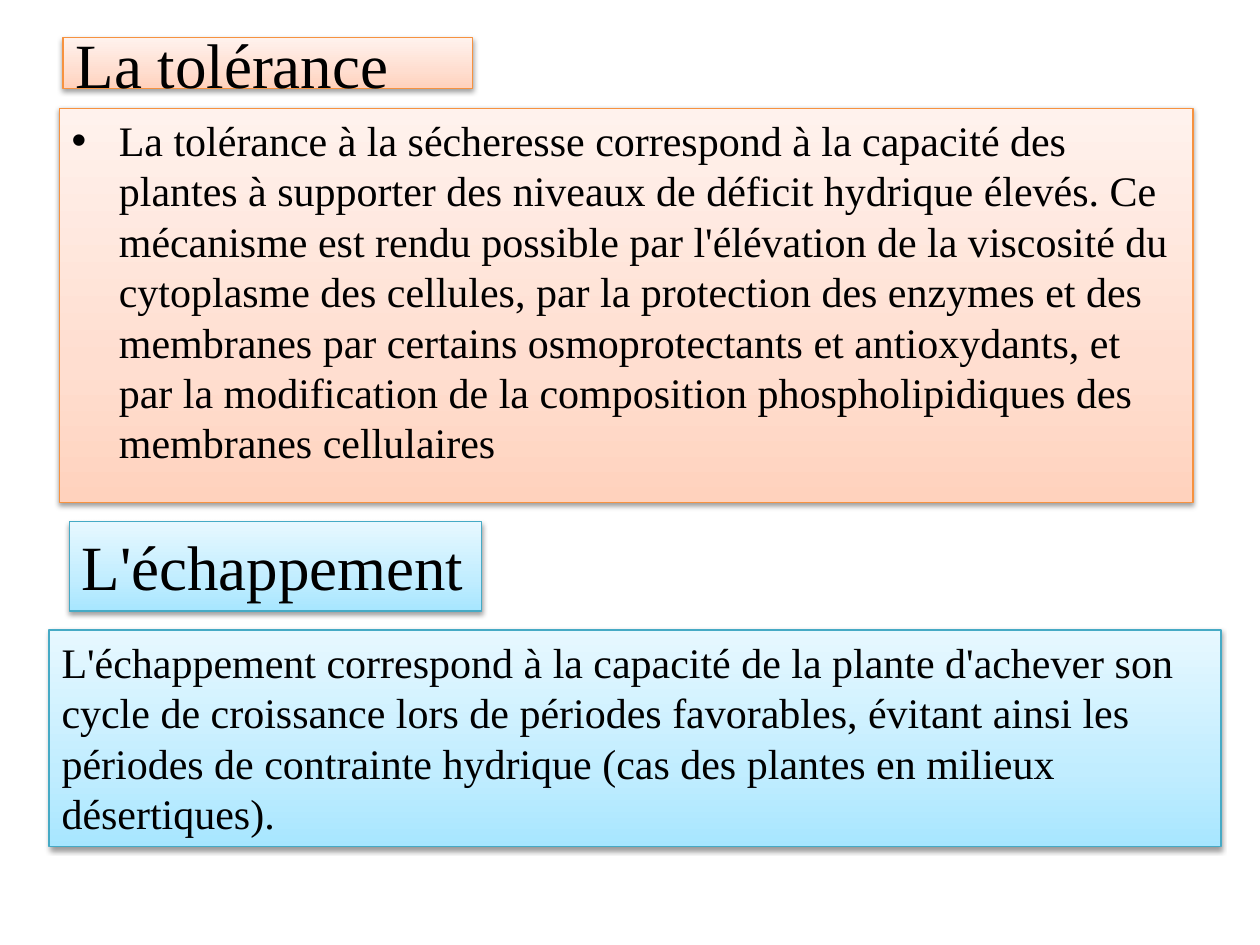
from dataclasses import dataclass

import lxml.etree
import pptx
import pptx.dml.color
import pptx.enum.shapes
import pptx.enum.text
import pptx.oxml
import pptx.oxml.ns
import pptx.util

Pt = pptx.util.Pt
Anchor = pptx.enum.text.MSO_ANCHOR
AutoSize = pptx.enum.text.MSO_AUTO_SIZE
qn = pptx.oxml.ns.qn


@dataclass(frozen=True)
class Theme:
    border: str
    stops: tuple[tuple[int, str], ...]


@dataclass(frozen=True)
class Panel:
    text: str
    left: float
    top: float
    width: float
    height: float
    size: int
    theme: Theme
    frame: dict
    bulleted: bool = False


ORANGE = Theme("F69240", ((0, "FFD2BD"), (35, "FFDED0"), (100, "FFF2ED")))
BLUE = Theme("46AAC5", ((0, "A7E6FF"), (35, "C1EDFF"), (100, "E7F8FF")))

TITLE_FRAME = {"word_wrap": True, "auto_size": AutoSize.NONE, "vertical_anchor": Anchor.MIDDLE}
BODY_FRAME = {"word_wrap": True, "auto_size": AutoSize.NONE, "vertical_anchor": Anchor.TOP}
GROWING_FRAME = {"word_wrap": True, "auto_size": AutoSize.SHAPE_TO_FIT_TEXT, "vertical_anchor": Anchor.TOP}
UNWRAPPED_FRAME = GROWING_FRAME | {"word_wrap": False}

TOLERANCE_TITLE = Panel("La tolérance", 36, 21.6, 234, 28.8, 36, ORANGE, TITLE_FRAME)
PANELS = (
    Panel(
        "La tolérance à la sécheresse correspond à la capacité des plantes à supporter "
        "des niveaux de déficit hydrique élevés. Ce mécanisme est rendu possible par "
        "l'élévation de la viscosité du cytoplasme des cellules, par la protection des "
        "enzymes et des membranes par certains osmoprotectants et antioxydants, et par "
        "la modification de la composition phospholipidiques des membranes cellulaires",
        33.84, 61.92, 648, 225.36, 24, ORANGE, BODY_FRAME, bulleted=True,
    ),
    Panel(
        "L'échappement correspond à la capacité de la plante d'achever son cycle de "
        "croissance lors de périodes favorables, évitant ainsi les périodes de "
        "contrainte hydrique (cas des plantes en milieux désertiques).",
        28.08, 360, 669.6, 123.84, 24, BLUE, GROWING_FRAME,
    ),
    Panel("L'échappement", 39.6, 298.08, 235.44, 51.12, 36, BLUE, UNWRAPPED_FRAME),
)


def color(value: str) -> pptx.dml.color.RGBColor:
    return pptx.dml.color.RGBColor.from_string(value)


def set_all(target, values: dict) -> None:
    for attribute, value in values.items():
        setattr(target, attribute, value)


def add_node(parent, tag: str, **attributes):
    return lxml.etree.SubElement(parent, qn(tag), {key: str(value) for key, value in attributes.items()})


def apply_theme(shape, theme: Theme) -> None:
    shape.fill.gradient()
    shape.fill.gradient_angle = 90
    properties = shape.element.spPr
    stop_list = properties.find(qn("a:gradFill")).find(qn("a:gsLst"))
    for stop in list(stop_list):
        stop_list.remove(stop)
    for position, value in theme.stops:
        stop = add_node(stop_list, "a:gs", pos=position * 1000)
        add_node(stop, "a:srgbClr", val=value)
    shape.line.color.rgb = color(theme.border)
    shape.line.width = Pt(0.75)
    effects = add_node(properties, "a:effectLst")
    shadow = add_node(effects, "a:outerShdw", blurRad=Pt(3.1), dist=Pt(1.6), dir=5400000, rotWithShape=0)
    shade = add_node(shadow, "a:srgbClr", val="000000")
    add_node(shade, "a:alpha", val=38000)


def add_bullet(paragraph) -> None:
    properties = paragraph._p.get_or_add_pPr()
    properties.set("marL", str(Pt(27)))
    properties.set("indent", str(-Pt(27)))
    add_node(properties, "a:buFont", typeface="Arial")
    add_node(properties, "a:buChar", char="•")


def fill_panel(shape, panel: Panel) -> None:
    set_all(shape, {name: Pt(getattr(panel, name)) for name in ("left", "top", "width", "height")})
    apply_theme(shape, panel.theme)
    shape.text_frame.text = panel.text
    set_all(shape.text_frame, panel.frame)
    paragraph = shape.text_frame.paragraphs[0]
    paragraph.alignment = pptx.enum.text.PP_ALIGN.LEFT
    if panel.bulleted:
        add_bullet(paragraph)
    font = paragraph.runs[0].font
    set_all(font, {"name": "Times New Roman", "size": Pt(panel.size)})
    font.color.rgb = color("000000")


def main() -> None:
    deck = pptx.Presentation()
    set_all(deck, {"slide_width": Pt(720), "slide_height": Pt(540)})
    slide = deck.slides.add_slide(deck.slide_layouts.get_by_name("Title Only"))
    fill_panel(slide.shapes.title, TOLERANCE_TITLE)
    for panel in PANELS:
        shape = slide.shapes.add_shape(pptx.enum.shapes.MSO_SHAPE.RECTANGLE, 0, 0, 0, 0)
        fill_panel(shape, panel)
    deck.save("out.pptx")


if __name__ == "__main__":
    main()
